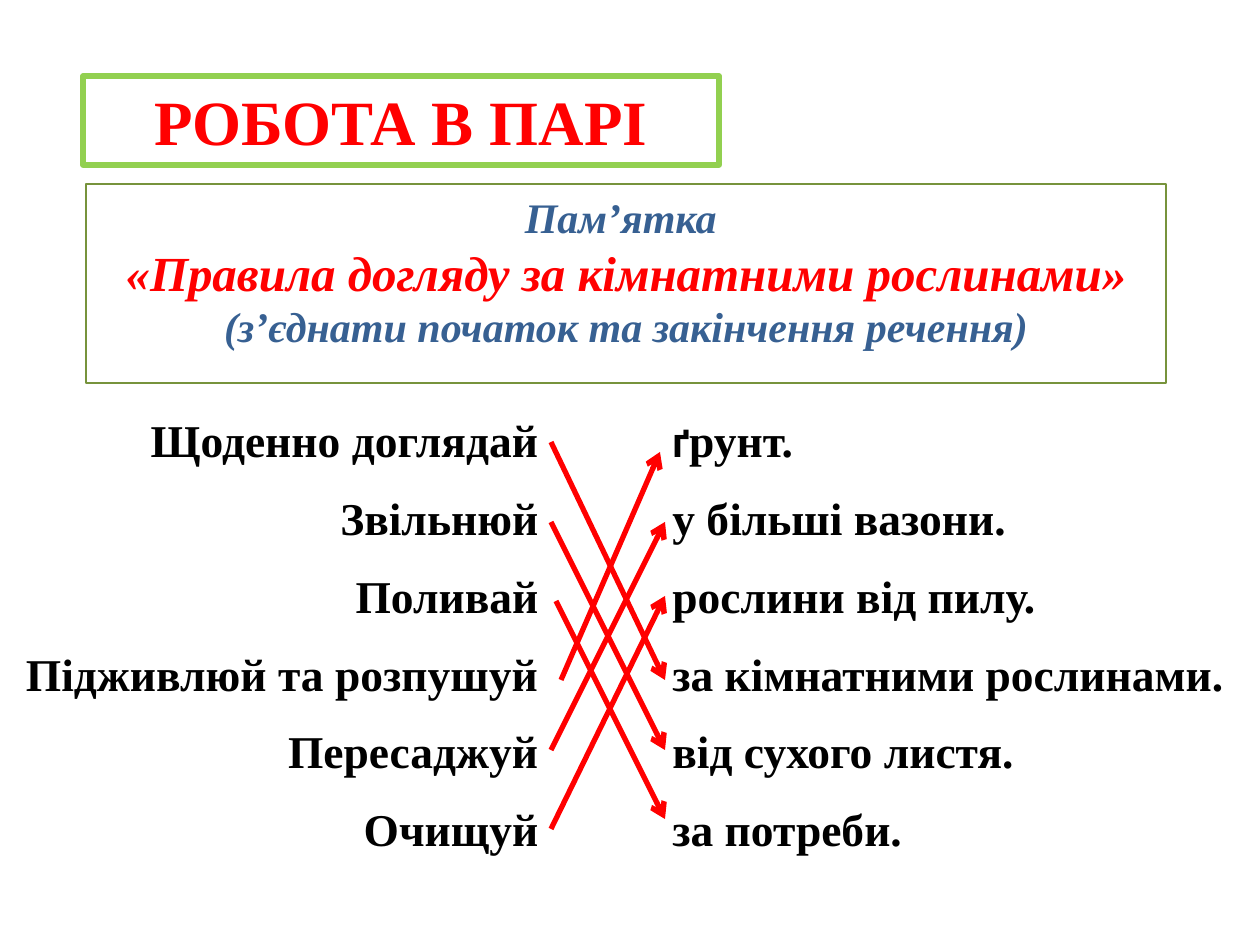
"""Build a matching exercise slide about caring for house plants."""

from dataclasses import dataclass

import lxml.etree
import pptx
import pptx.dml.color
import pptx.enum.shapes
import pptx.enum.text
import pptx.oxml
import pptx.oxml.ns
import pptx.util

EMU_PER_PX = 914400 / 126
RED = pptx.dml.color.RGBColor(0xFF, 0x00, 0x00)
BLUE = pptx.dml.color.RGBColor(0x37, 0x60, 0x92)
BLACK = pptx.dml.color.RGBColor(0x00, 0x00, 0x00)
WHITE = pptx.dml.color.RGBColor(0xFF, 0xFF, 0xFF)
OLIVE = pptx.dml.color.RGBColor(0x77, 0x93, 0x3C)
LIME = pptx.dml.color.RGBColor(0x92, 0xD0, 0x50)
SERIF = "Times New Roman"
SANS = "Calibri"
CENTER = pptx.enum.text.PP_ALIGN.CENTER
LEFT = pptx.enum.text.PP_ALIGN.LEFT
RIGHT = pptx.enum.text.PP_ALIGN.RIGHT


@dataclass(frozen=True)
class Run:
    text: str
    size: int = 26
    color: pptx.dml.color.RGBColor = BLACK
    font: str = SERIF
    italic: bool = False


@dataclass(frozen=True)
class Box:
    left: int
    top: int
    width: int
    height: int


@dataclass(frozen=True)
class Arrow:
    start_x: int
    start_y: int
    end_x: int
    end_y: int


TITLE = [[Run("РОБОТА В ПАРІ", 36, RED)]]
MEMO = [
    [Run("Пам’ятка ", 24, BLUE, italic=True)],
    [Run("«Правила догляду за кімнатними рослинами»", 28, RED, italic=True)],
    [Run("(з’єднати початок та закінчення речення)", 24, BLUE, italic=True)],
]
BEGINNINGS = [
    [Run(text)]
    for text in (
        "Щоденно доглядай",
        "Звільнюй",
        "Поливай",
        "Підживлюй та розпушуй",
        "Пересаджуй",
        "Очищуй",
    )
]
ENDINGS = [[Run("ґ", font=SANS), Run("рунт.")]] + [
    [Run(text)]
    for text in (
        "у більші вазони.",
        "рослини від пилу.",
        "за кімнатними рослинами.",
        "від сухого листя.",
        "за потреби.",
    )
]
ARROWS = [
    Arrow(551, 442, 665, 680),
    Arrow(551, 522, 665, 750),
    Arrow(556, 601, 665, 819),
    Arrow(561, 680, 660, 452),
    Arrow(551, 750, 665, 522),
    Arrow(551, 829, 665, 596),
]


def px(length: int) -> pptx.util.Emu:
    """Turn pixels into EMU."""
    return pptx.util.Emu(round(length * EMU_PER_PX))


def box_lengths(box: Box) -> list[pptx.util.Emu]:
    """Give the position and size of a box in EMU."""
    return [px(length) for length in (box.left, box.top, box.width, box.height)]


def write_text(text_frame, paragraphs: list[list[Run]], alignment, gap: float = 0) -> None:
    """Fill a text frame with paragraphs separated by a gap in points."""
    text_frame.word_wrap = True
    for index, runs in enumerate(paragraphs):
        paragraph = text_frame.add_paragraph() if index else text_frame.paragraphs[0]
        paragraph.alignment = alignment
        paragraph.space_before = pptx.util.Pt(gap if index else 0)
        for item in runs:
            run = paragraph.add_run()
            run.text = item.text
            run.font.color.rgb = item.color
            formats = {
                "name": item.font,
                "size": pptx.util.Pt(item.size),
                "bold": True,
                "italic": item.italic,
            }
            for name, value in formats.items():
                setattr(run.font, name, value)


def add_panel(slide, box: Box, border, border_width: float, paragraphs, bottom: int) -> None:
    """Draw a bordered white panel with centred text."""
    shape = slide.shapes.add_shape(
        pptx.enum.shapes.MSO_SHAPE.RECTANGLE, *box_lengths(box)
    )
    shape.shadow.inherit = False
    shape.fill.solid()
    shape.fill.fore_color.rgb = WHITE
    shape.line.color.rgb = border
    shape.line.width = pptx.util.Pt(border_width)
    shape.text_frame.vertical_anchor = pptx.enum.text.MSO_ANCHOR.MIDDLE
    shape.text_frame.margin_bottom = px(bottom)
    write_text(shape.text_frame, paragraphs, CENTER)


def add_column(slide, box: Box, paragraphs: list[list[Run]], alignment) -> None:
    """Draw one column of sentence parts."""
    shape = slide.shapes.add_textbox(*box_lengths(box))
    write_text(shape.text_frame, paragraphs, alignment, gap=13.3)


def add_arrow(slide, arrow: Arrow) -> None:
    """Draw a red arrow joining two sentence parts."""
    connector = slide.shapes.add_connector(
        pptx.enum.shapes.MSO_CONNECTOR.STRAIGHT,
        px(arrow.start_x),
        px(arrow.start_y),
        px(arrow.end_x),
        px(arrow.end_y),
    )
    connector.line.color.rgb = RED
    connector.line.width = pptx.util.Pt(3)
    qualified = pptx.oxml.ns.qn
    properties = connector.element.find(qualified("p:spPr"))
    line = properties.find(qualified("a:ln"))
    lxml.etree.SubElement(line, qualified("a:tailEnd"), type="arrow")
    lxml.etree.SubElement(properties, qualified("a:effectLst"))


def main() -> None:
    """Build and save the slide."""
    presentation = pptx.Presentation()
    presentation.slide_width = px(1260)
    presentation.slide_height = px(945)
    slide = presentation.slides.add_slide(presentation.slide_layouts[6])
    add_panel(slide, Box(86, 184, 1080, 199), OLIVE, 0.75, MEMO, bottom=30)
    add_panel(slide, Box(83, 76, 636, 89), LIME, 3, TITLE, bottom=6)
    add_column(slide, Box(0, 406, 551, 450), BEGINNINGS, RIGHT)
    add_column(slide, Box(660, 406, 593, 450), ENDINGS, LEFT)
    for arrow in ARROWS:
        add_arrow(slide, arrow)
    presentation.save("out.pptx")


if __name__ == "__main__":
    main()
